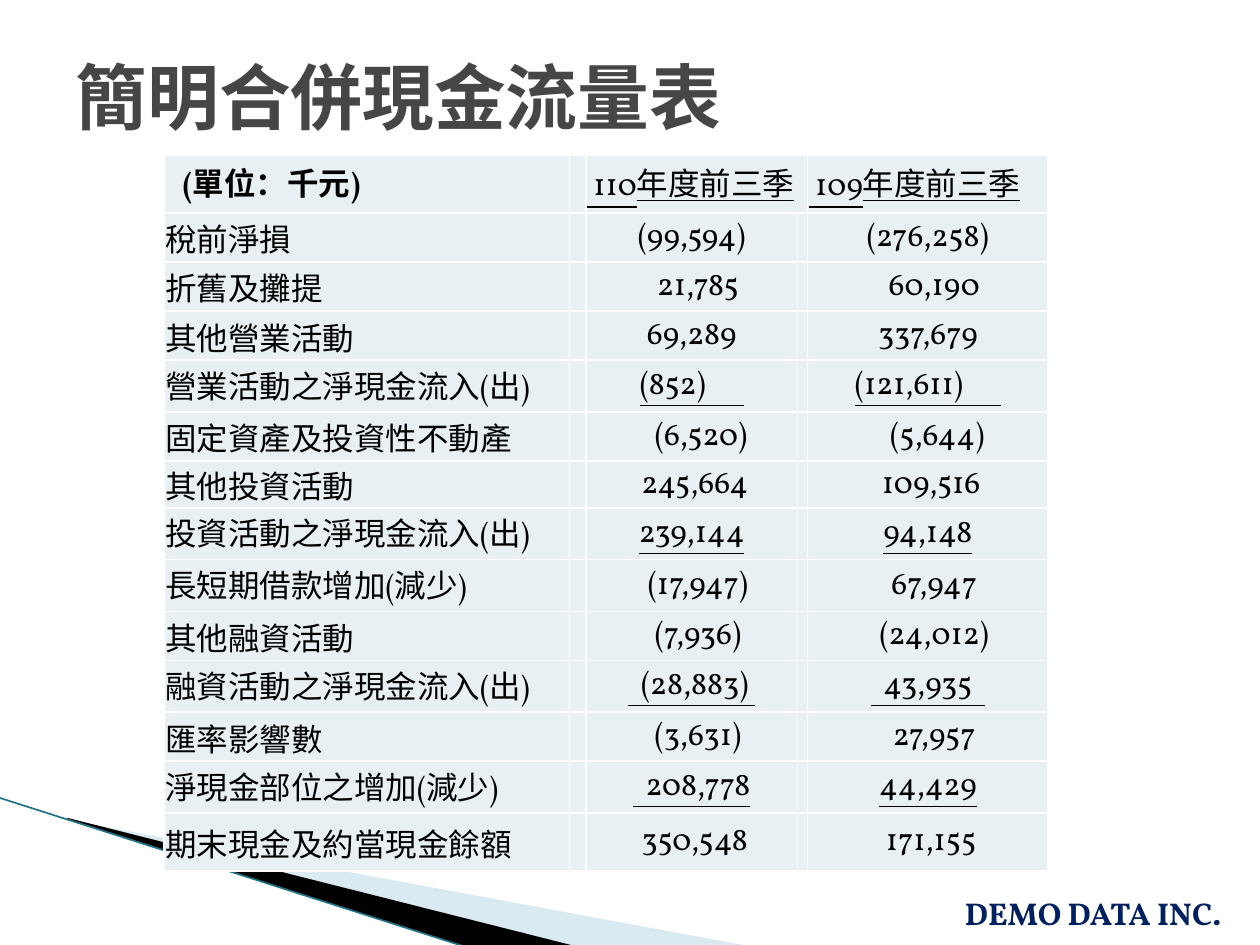
from lxml import etree
from pptx import Presentation
from pptx.dml.color import RGBColor
from pptx.enum.shapes import MSO_CONNECTOR
from pptx.enum.text import MSO_ANCHOR, PP_ALIGN
from pptx.oxml import parse_xml
from pptx.oxml.ns import nsdecls, qn
from pptx.util import Inches, Pt

LEFT, CENTER = PP_ALIGN.LEFT, PP_ALIGN.CENTER
TOP, MIDDLE = MSO_ANCHOR.TOP, MSO_ANCHOR.MIDDLE
STRAIGHT = MSO_CONNECTOR.STRAIGHT
SERIF, SANS = "Vollkorn", "Noto Sans CJK SC"
SPACE = 0.05  # width of one indent step in inches

# Content: label, then (figure, indent steps) for each year, then underlined or not
TITLE = "簡明合併現金流量表"
COMPANY = "DEMO DATA INC."
HEADER = ("(單位：千元)", " 110年度前三季", " 109年度前三季")
ROWS = [
    ("稅前淨損", ("(99,594)", 0), ("(276,258)", 0), False),
    ("折舊及攤提", ("21,785", 2), ("60,190", 2), False),
    ("其他營業活動", ("69,289", 0), ("337,679", 0), False),
    ("營業活動之淨現金流入(出)", ("(852)      ", 0), ("(121,611)      ", 0), True),
    ("固定資產及投資性不動產", ("(6,520)", 3), ("(5,644)", 3), False),
    ("其他投資活動", ("245,664", 1), ("109,516", 1), False),
    ("投資活動之淨現金流入(出)", ("239,144", 0), ("94,148", 0), True),
    ("長短期借款增加(減少)", ("(17,947)", 2), ("67,947", 2), False),
    ("其他融資活動", ("(7,936)", 2), ("(24,012)", 2), False),
    ("融資活動之淨現金流入(出)", ("  (28,883) ", 0), ("  43,935  ", 0), True),
    ("匯率影響數", ("(3,631)", 2), ("27,957", 2), False),
    ("淨現金部位之增加(減少)", ("  208,778", 0), ("44,429", 0), True),
    ("期末現金及約當現金餘額", ("350,548", 1), ("171,155", 1), False),
]
COLUMN_WIDTHS = [3.22, 0.13, 1.68, 0.08, 1.91]
ROW_HEIGHTS = [0.46] + [0.39] * 5 + [0.31] + [0.39] * 6 + [0.46]
LABEL, YEAR_110, GAP, YEAR_109 = 0, 2, 3, 4  # column positions

# Corner decoration: outline, colour, opacity in percent
WEDGES = [
    ([(0.55, 6.51), (5.95, 7.51), (4.56, 7.51), (0.55, 6.5)], "A0CBDC", 40),
    ([(0.53, 6.49), (4.57, 7.51), (3.72, 7.52), (0.54, 6.5)], "000000", 100),
]


def color(value):
    return RGBColor.from_string(value)


def add_run(paragraph, text, font, size, value, bold=False, underline=False):
    run = paragraph.add_run()
    run.text = text
    run.font.name, run.font.size = font, Pt(size)
    run.font.bold, run.font.underline = bold, underline
    run.font.color.rgb = color(value)
    east_asian = etree.SubElement(run.font._element, qn("a:ea"))
    east_asian.set("typeface", SANS)


def add_wedge(slide, points, value, opacity):
    builder = slide.shapes.build_freeform(
        *[Inches(n) for n in points[0]], scale=1.0)
    builder.add_line_segments([(Inches(x), Inches(y)) for x, y in points[1:]])
    shape = builder.convert_to_shape()
    shape.shadow.inherit = False
    shape.fill.solid()
    shape.fill.fore_color.rgb = color(value)
    shape.line.fill.background()
    if opacity < 100:
        fill = shape._element.spPr.find(qn("a:solidFill"))
        etree.SubElement(fill[0], qn("a:alpha")).set("val", str(opacity * 1000))


def format_cell(cell):
    cell.margin_left = cell.margin_right = cell.margin_top = Inches(0.01)
    cell.margin_bottom = 0
    cell.vertical_anchor = MIDDLE
    properties = cell._tc.get_or_add_tcPr()
    for side in ("lnL", "lnR", "lnT", "lnB"):
        properties.append(parse_xml(
            f'<a:{side} {nsdecls("a")} w="12700"><a:solidFill>'
            f'<a:srgbClr val="FFFFFF"/></a:solidFill></a:{side}>'))
    cell.fill.solid()
    cell.fill.fore_color.rgb = color("E8F0F4")


def write_cell(cell, text, align=LEFT, indent=0, bold=False, underline=False):
    paragraph = cell.text_frame.paragraphs[0]
    paragraph.alignment = align
    if indent:
        cell.margin_left = Inches(0.01 + indent * SPACE)
    add_run(paragraph, text, SERIF, 18, "000000", bold, underline)


def add_cash_flow_table(slide):
    table = slide.shapes.add_table(
        len(ROW_HEIGHTS), len(COLUMN_WIDTHS), Inches(1.3), Inches(1.23),
        Inches(sum(COLUMN_WIDTHS)), Inches(sum(ROW_HEIGHTS))).table
    table.first_row = table.horz_banding = False
    for column, width in zip(table.columns, COLUMN_WIDTHS):
        column.width = Inches(width)
    for row, height in zip(table.rows, ROW_HEIGHTS):
        row.height = Inches(height)
    for cell in table.iter_cells():
        format_cell(cell)

    # Header row
    table.cell(0, YEAR_110).merge(table.cell(0, GAP))
    unit, first_year, second_year = HEADER
    write_cell(table.cell(0, LABEL), unit, bold=True)
    table.cell(0, LABEL).margin_left = Inches(0.15)
    write_cell(table.cell(0, YEAR_110), first_year, underline=True)
    write_cell(table.cell(0, YEAR_109), second_year, underline=True)

    # Figures
    for index, (label, first, second, underline) in enumerate(ROWS, start=1):
        write_cell(table.cell(index, LABEL), label)
        for column, (figure, indent) in ((YEAR_110, first), (YEAR_109, second)):
            write_cell(table.cell(index, column), figure, CENTER, indent,
                       underline=underline)


def main():
    presentation = Presentation()
    presentation.slide_width, presentation.slide_height = Inches(10), Inches(7.5)
    slide = presentation.slides.add_slide(presentation.slide_layouts[5])

    # Corner decoration
    for points, value, opacity in WEDGES:
        add_wedge(slide, points, value, opacity)
    edge = slide.shapes.add_connector(
        STRAIGHT, Inches(-0.01), Inches(6.33), Inches(3.71), Inches(7.52))
    edge.line.color.rgb = color("1F7384")
    edge.line.width = Pt(0.95)
    etree.SubElement(edge._element.spPr, qn("a:effectLst"))

    add_cash_flow_table(slide)

    # Company name
    box = slide.shapes.add_textbox(
        Inches(7.56), Inches(7.05), Inches(2.37), Inches(0.4))
    box.text_frame.word_wrap = False
    add_run(box.text_frame.paragraphs[0], COMPANY, SERIF, 18, "002060", bold=True)

    # Title
    title = slide.shapes.title
    title.left, title.top = Inches(0.5), Inches(0.37)
    title.width, title.height = Inches(9), Inches(1.25)
    title.text_frame.vertical_anchor = TOP
    paragraph = title.text_frame.paragraphs[0]
    paragraph.alignment = LEFT
    add_run(paragraph, TITLE, SANS, 41, "464646", bold=True)

    presentation.save("out.pptx")


if __name__ == "__main__":
    main()
